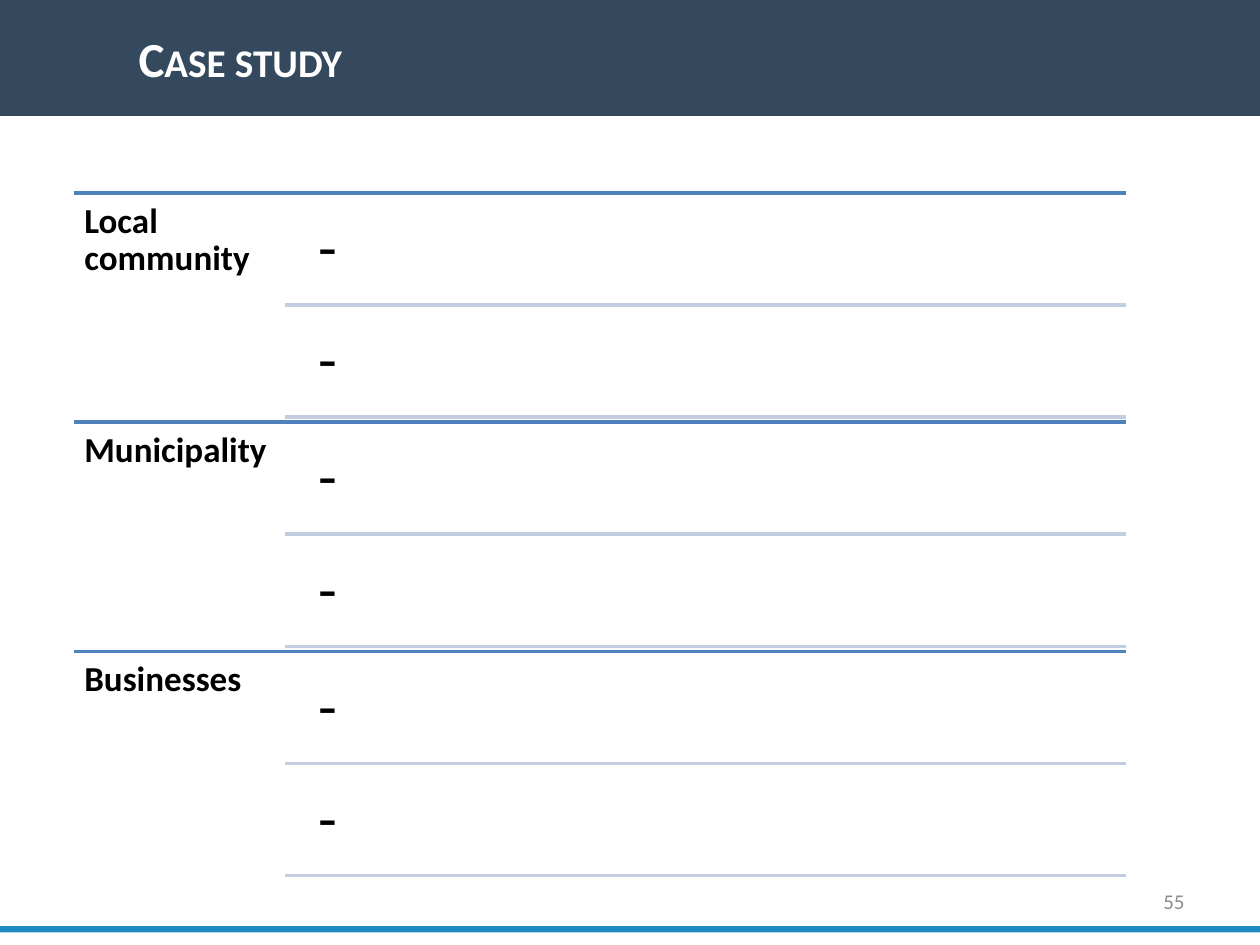
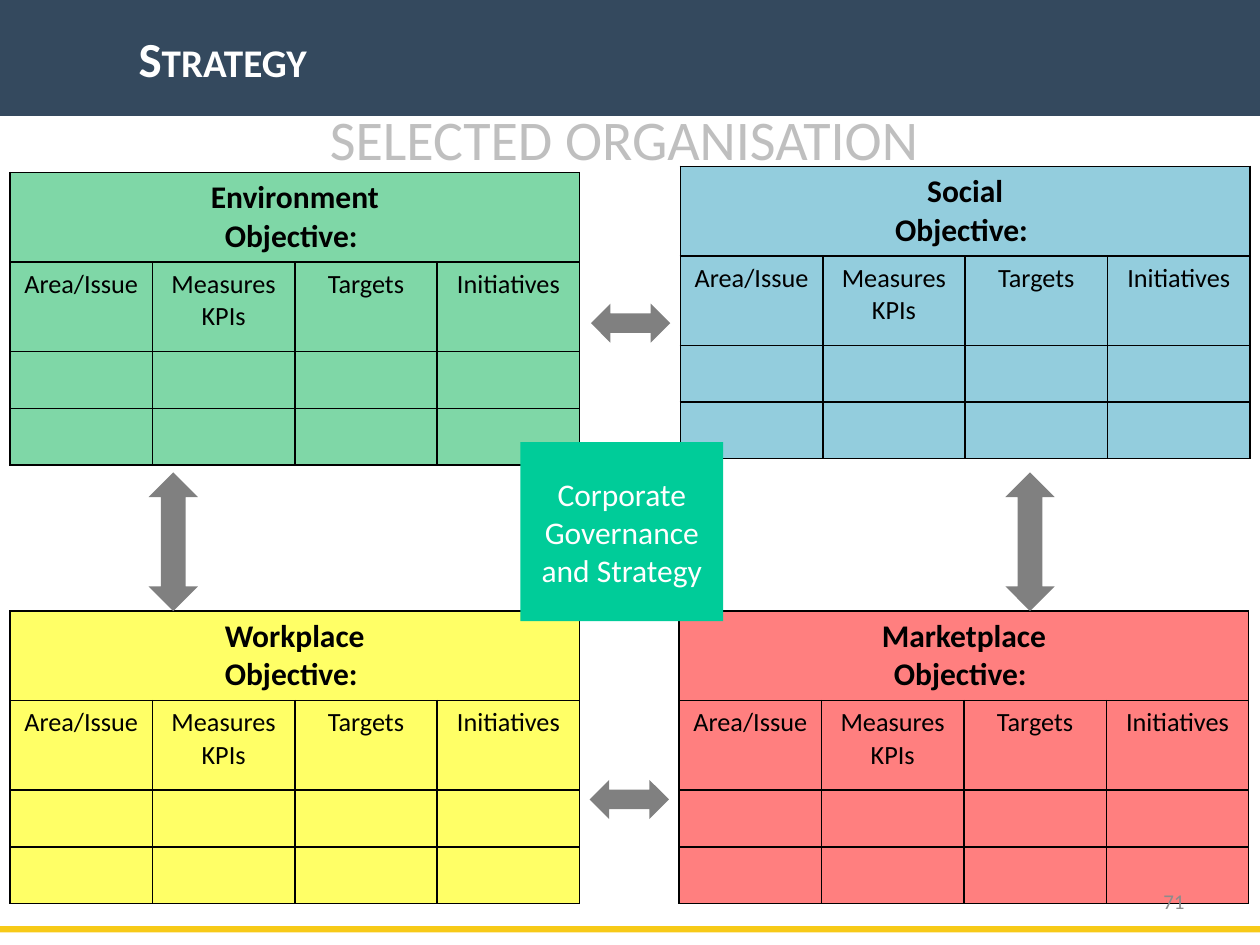
from lxml import etree
from pptx import Presentation
from pptx.dml.color import RGBColor
from pptx.enum.shapes import MSO_CONNECTOR, MSO_SHAPE
from pptx.enum.text import MSO_ANCHOR, MSO_AUTO_SIZE, PP_ALIGN
from pptx.oxml import parse_xml
from pptx.oxml.ns import nsdecls, qn
from pptx.util import Inches, Pt

LEFT, MID, RIGHT = PP_ALIGN.LEFT, PP_ALIGN.CENTER, PP_ALIGN.RIGHT
CENTRE = MSO_ANCHOR.MIDDLE
RECT = MSO_SHAPE.RECTANGLE
TALL, WIDE = MSO_SHAPE.UP_DOWN_ARROW, MSO_SHAPE.LEFT_RIGHT_ARROW

WHITE = RGBColor(0xFF, 0xFF, 0xFF)
BLACK = RGBColor(0x00, 0x00, 0x00)
NAVY = RGBColor(0x34, 0x49, 0x5E)
BLUE = RGBColor(0x1E, 0x8B, 0xC3)
GOLD = RGBColor(0xF7, 0xCA, 0x18)
RULE = RGBColor(0x4F, 0x81, 0xBD)
PALE = RGBColor(0xC2, 0xCD, 0xE1)
GREY = RGBColor(0x80, 0x80, 0x80)
NOTE = RGBColor(0x8C, 0x8C, 0x8C)
SILVER = RGBColor(0xBF, 0xBF, 0xBF)
TEAL = RGBColor(0x00, 0xCC, 0x99)
GREEN = RGBColor(0x00, 0xB0, 0x50)
SKY = RGBColor(0x93, 0xCD, 0xDD)
LEMON = RGBColor(0xFF, 0xFF, 0x66)
RED = RGBColor(0xFF, 0x00, 0x00)
FONT = "Calibri"


def box(*sides):
    return [Inches(side) for side in sides]


def write(frame, text, size, color, bold=False, align=LEFT):
    """Fill a text frame and format all its paragraphs alike."""
    frame.text = text
    frame.word_wrap = True
    for para in frame.paragraphs:
        para.alignment = align
        for run in para.runs:
            run.font.name, run.font.size = FONT, Pt(size)
            run.font.bold, run.font.color.rgb = bold, color


deck = Presentation()
deck.slide_width, deck.slide_height = box(10, 7.5)
layout = deck.slide_layouts[5]
case = deck.slides.add_slide(layout)
plan = deck.slides.add_slide(layout)

# Case study: three sections with two open items each
EDGE, INNER, END = 0.59, 2.26, 8.94
TOP, STEP, ITEM = 1.53, 1.82, 0.89
rules, notes = [], []
for i, name in enumerate(["Local community", "Municipality", "Businesses"]):
    top = TOP + i * STEP
    notes.append((EDGE, top, INNER - EDGE, STEP, name, 20, True, 0.08))
    for j in range(2):
        y = top + 0.04 + j * ITEM
        notes.append((INNER + 0.12, y, 6.55, 0.84, "-", 35, False, 0.15))
        rules.append((INNER, y + 0.85, PALE))
    rules.append((EDGE, top, RULE))

for x, y, color in rules:
    line = case.shapes.add_connector(MSO_CONNECTOR.STRAIGHT, *box(x, y, END, y))
    line.line.color.rgb, line.line.width = color, Pt(2)
    etree.SubElement(line._element.spPr, qn("a:effectLst"))

for x, y, w, h, text, size, bold, pad in notes:
    frame = case.shapes.add_textbox(*box(x, y, w, h)).text_frame
    write(frame, text, size, BLACK, bold)
    frame.margin_left = frame.margin_right = Inches(pad)
    frame.margin_top = frame.margin_bottom = Inches(pad)
    frame.paragraphs[0].line_spacing = 0.9

# Strategy: four scorecards around a hub
COL, ROWS = 1.13, [0.71, 0.71, 0.45, 0.45]
HEADS = ["Area/Issue", "Measures\nKPIs", "Targets", "Initiatives"]
cards = [("Environment", 0.08, 1.37, GREEN, True),
         ("Social", 5.4, 1.32, SKY, False),
         ("Workplace", 0.08, 4.85, LEMON, False),
         ("Marketplace", 5.39, 4.85, RED, True)]
for name, x, y, color, clear in cards:
    table = plan.shapes.add_table(4, 4, *box(x, y, 4 * COL, sum(ROWS))).table
    table.first_row = table.horz_banding = False
    for row, high in zip(table.rows, ROWS):
        row.height = Inches(high)
    for col in table.columns:
        col.width = Inches(COL)
    for cell in table.iter_cells():
        cell.fill.solid()
        cell.fill.fore_color.rgb = color
        props = cell._tc.tcPr
        if clear:
            tint = props.find(".//" + qn("a:srgbClr"))
            etree.SubElement(tint, qn("a:alpha"), val="50000")
        for n, side in enumerate("LRTB"):
            props.insert(n, parse_xml(
                f'<a:ln{side} {nsdecls("a")} w="12700"><a:solidFill>'
                f'<a:srgbClr val="{BLACK}"/></a:solidFill></a:ln{side}>'))
    table.cell(0, 0).merge(table.cell(0, 3))
    write(table.cell(0, 0).text_frame, name + "\nObjective: ", 18, BLACK, True, MID)
    for c, head in enumerate(HEADS):
        write(table.cell(1, c).text_frame, head, 15, BLACK, align=MID)

banner = plan.shapes.add_textbox(*box(1.03, 0.78, 7.95, 0.64))
write(banner.text_frame, "SELECTED ORGANISATION ", 32, SILVER, align=MID)

blocks = [(plan, TALL, 1.18, 3.75, 0.39, 1.1, GREY),
          (plan, TALL, 7.98, 3.75, 0.39, 1.1, GREY),
          (plan, WIDE, 4.69, 2.41, 0.63, 0.31, GREY),
          (plan, WIDE, 4.68, 6.19, 0.63, 0.31, GREY),
          (case, RECT, 0, 7.35, 10, 0.05, BLUE),
          (plan, RECT, 0, 7.35, 10, 0.05, GOLD),
          (plan, RECT, 4.13, 3.51, 1.61, 1.42, TEAL)]
for slide, kind, x, y, w, h, color in blocks:
    shape = slide.shapes.add_shape(kind, *box(x, y, w, h))
    shape.shadow.inherit = False
    shape.fill.solid()
    shape.fill.fore_color.rgb = color
    shape.line.fill.background()
hub = shape.text_frame
write(hub, "Corporate Governance and Strategy", 18, WHITE, align=MID)
hub.vertical_anchor = CENTRE

# Title band and page number on both slides
for slide, text, page in [(case, "Case study", "55"), (plan, "Strategy", "71")]:
    title = slide.shapes.title
    title.left, title.top, title.width, title.height = box(0, 0, 10, 0.92)
    title.fill.solid()
    title.fill.fore_color.rgb = NAVY
    frame = title.text_frame
    write(frame, text, 28, WHITE, True)
    frame.auto_size = MSO_AUTO_SIZE.NONE
    frame.vertical_anchor = CENTRE
    frame.margin_left = Inches(1.1)
    frame.paragraphs[0].runs[0].font._element.set("cap", "small")

    frame = slide.shapes.add_textbox(*box(7.17, 6.95, 2.33, 0.4)).text_frame
    write(frame, page, 12, NOTE, align=RIGHT)
    frame.vertical_anchor = CENTRE

deck.save("out.pptx")
